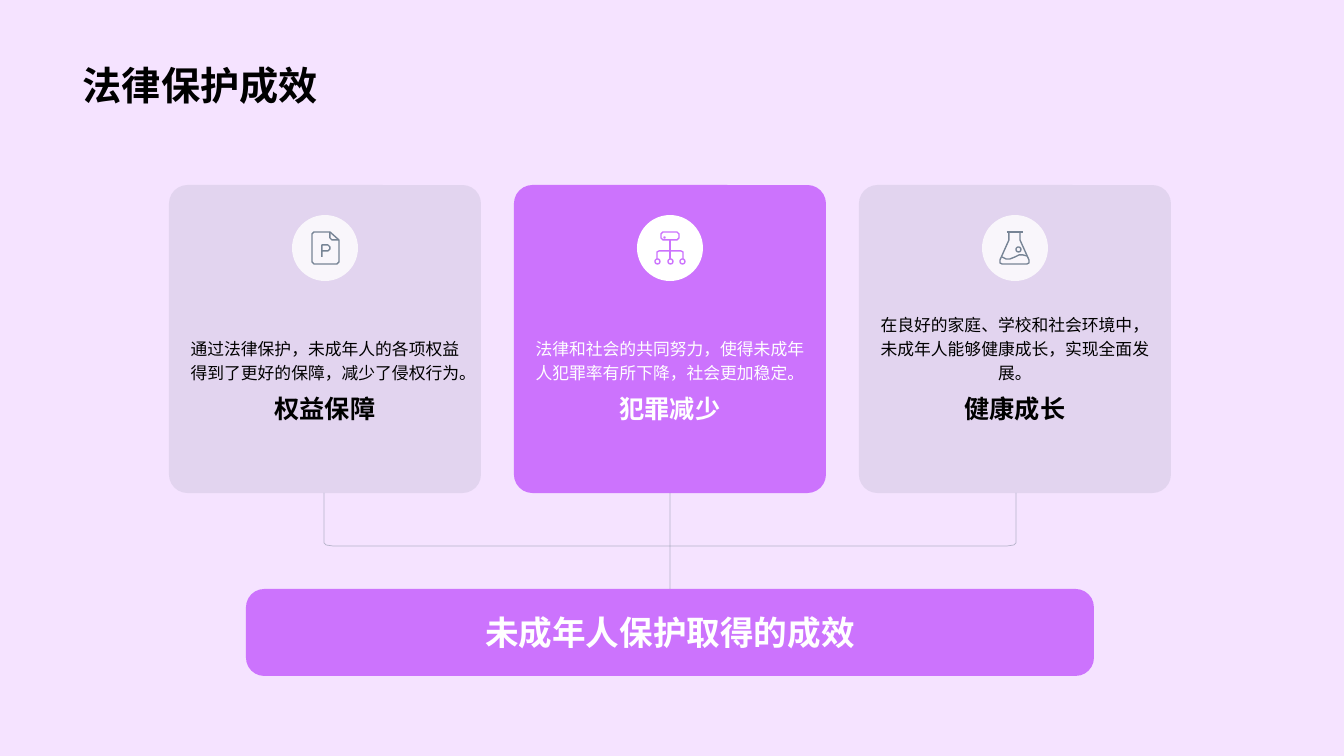
from pptx import Presentation
from pptx.dml.color import RGBColor
from pptx.enum.lang import MSO_LANGUAGE_ID as LANG
from pptx.enum.shapes import MSO_CONNECTOR as CONN, MSO_SHAPE as SHAPE
from pptx.enum.text import MSO_ANCHOR as ANCHOR, PP_ALIGN as ALIGN
from pptx.oxml.ns import qn
from pptx.util import Emu, Pt
from lxml.etree import SubElement

SLIDE_W, SLIDE_H = 1344, 756
PX = 12192000 / SLIDE_W
FONT = "Arial"
COLORS = {"bg": "F5E3FF", "purple": "CC73FD", "slate": "778495",
          "white": "FFFFFF", "black": "000000"}

# Card grid
CARD_X, CARD_Y, CARD_W, CARD_H, CARD_STEP = 169, 185, 312, 308, 345
BADGE = 66

# Icon strokes and dots (x, y, size), measured from the badge centre
DOCUMENT = (
    [[(-11, -16), (5, -16), (14, -8), (14, 14), (12, 16), (-11, 16),
      (-13, 14), (-13, -14), (-11, -16)],
     [(5, -16), (5, -10), (7, -8), (14, -8)],
     [(-3, 9), (-3, -3), (3, -3), (5, -1), (5, 1), (3, 3), (-3, 3)]],
    [])
NETWORK = (
    [[(-7, -16), (7, -16), (9, -14), (9, -10), (7, -8), (-7, -8),
      (-9, -10), (-9, -14), (-7, -16)],
     [(0, -8), (0, 11)],
     [(-13, 11), (-13, 4), (-11, 3), (11, 3), (13, 4), (13, 11)]],
    [(-15, 11, 5), (-2, 11, 5), (10, 11, 5), (-6, -11, 1)])
FLASK = (
    [[(-8, -16), (8, -16)],
     [(-6, -16), (-6, -8), (-15, 12), (-15, 15), (-13, 16), (12, 16),
      (14, 15), (14, 12), (5, -8), (5, -16)],
     [(-13, 9), (-9, 11), (-5, 11), (0, 9), (4, 7), (8, 7), (12, 8)]],
    [(1, -1, 5)])

CARDS = [
    ("权益保障", "通过法律保护，未成年人的各项权益得到了更好的保障，减少了侵权行为。", DOCUMENT),
    ("犯罪减少", "法律和社会的共同努力，使得未成年人犯罪率有所下降，社会更加稳定。", NETWORK),
    ("健康成长", "在良好的家庭、学校和社会环境中，未成年人能够健康成长，实现全面发展。", FLASK),
]


def px(n):
    return Emu(round(n * PX))


def paint(fmt, color, alpha=100):
    """Give a fill a solid colour, with opacity in percent."""
    fmt.solid()
    fmt.fore_color.rgb = RGBColor.from_string(COLORS[color])
    if alpha < 100:
        clr = fmt._xPr.find(qn("a:solidFill"))[0]
        SubElement(clr, qn("a:alpha"), val=str(alpha * 1000))


def stroke(s, color, width, alpha=100):
    s.line.width = Pt(width)
    paint(s.line.fill, color, alpha)


def write(s, text, size=12, color="black", bold=False, align=ALIGN.CENTER,
          anchor=ANCHOR.TOP, spacing=None):
    tf = s.text_frame
    tf.word_wrap = True
    tf.vertical_anchor = anchor
    p = tf.paragraphs[0]
    p.alignment = align
    p.line_spacing = spacing
    r = p.add_run()
    r.text = text
    r.font.name, r.font.size, r.font.bold = FONT, Pt(size), bold
    r.font.language_id = LANG.SIMPLIFIED_CHINESE
    paint(r.font.fill, color)


def add_text(slide, x, y, w, h, text, **fmt):
    write(slide.shapes.add_textbox(px(x), px(y), px(w), px(h)), text, **fmt)


def add_block(slide, kind, x, y, w, h, color=None, alpha=100, corner=None):
    s = slide.shapes.add_shape(kind, px(x), px(y), px(w), px(h))
    s.shadow.inherit = False
    s.line.fill.background()
    if color:
        paint(s.fill, color, alpha)
    else:
        s.fill.background()
    if corner is not None:
        s.adjustments[0] = corner
    return s


def add_outline(slide, x, y, strokes, color, width, alpha=100):
    """Draw open strokes whose points are measured from (x, y)."""
    paths = [[(x + dx, y + dy) for dx, dy in points] for points in strokes]
    fb = slide.shapes.build_freeform(*paths[0][0], scale=PX)
    for i, points in enumerate(paths):
        if i:
            fb.move_to(*points[0])
        fb.add_line_segments(points[1:], close=False)
    s = fb.convert_to_shape()
    s.shadow.inherit = False
    s.fill.background()
    stroke(s, color, width, alpha)


def add_icon(slide, cx, cy, icon, color):
    strokes, dots = icon
    add_outline(slide, cx, cy, strokes, color, 1)
    for dx, dy, size in dots:
        dot = add_block(slide, SHAPE.OVAL, cx + dx, cy + dy, size, size)
        stroke(dot, color, 1)


def add_card(slide, x, title, body, icon, active):
    fill, alpha = ("purple", 100) if active else ("slate", 15)
    ink = "white" if active else "black"
    card = add_block(slide, SHAPE.ROUNDED_RECTANGLE, x, CARD_Y, CARD_W, CARD_H,
                     fill, alpha, corner=0.06)
    cx, cy = x + CARD_W // 2, CARD_Y + 63
    add_block(slide, SHAPE.OVAL, cx - BADGE // 2, cy - BADGE // 2, BADGE, BADGE,
              "white", 100 if active else 80)
    add_icon(slide, cx, cy, icon, fill)
    add_text(slide, x, 388, CARD_W, 70, title, size=18, color=ink, bold=True)
    add_text(slide, x + 10, 296, CARD_W - 20, 92, body, color=ink,
             anchor=ANCHOR.BOTTOM, spacing=1.2)
    return card


def add_link(slide, top, bottom):
    """Join the bottom of one box to the top of another."""
    c = slide.shapes.add_connector(CONN.STRAIGHT, 0, 0, 0, 0)
    c.begin_connect(top, 2)
    c.end_connect(bottom, 0)
    stroke(c, "slate", 0.5, 50)
    SubElement(c._element.spPr, qn("a:effectLst"))


def main():
    prs = Presentation()
    prs.slide_width, prs.slide_height = px(SLIDE_W), px(SLIDE_H)
    slide = prs.slides.add_slide(prs.slide_layouts[6])
    paint(slide.background.fill, "bg")

    # Title
    add_text(slide, 73, 14, 1198, 99, "法律保护成效", size=28, bold=True,
             align=ALIGN.LEFT, anchor=ANCHOR.BOTTOM)

    # Bracket under the cards
    bracket = [(0, 0), (0, 50), (2, 52), (9, 53),
               (683, 53), (690, 52), (692, 50), (692, 0)]
    add_outline(slide, 324, CARD_Y + CARD_H, [bracket], "slate", 0.5, 50)

    # Summary bar
    bar = add_block(slide, SHAPE.ROUNDED_RECTANGLE, 246, 589, 848, 87,
                    "purple", corner=0.21)
    write(bar, "未成年人保护取得的成效", size=24, color="white", bold=True,
          anchor=ANCHOR.MIDDLE)

    # Cards, the middle one highlighted and linked to the bar
    for i, (title, body, icon) in enumerate(CARDS):
        active = i == 1
        card = add_card(slide, CARD_X + i * CARD_STEP, title, body, icon, active)
        if active:
            add_link(slide, card, bar)

    prs.save("out.pptx")


if __name__ == "__main__":
    main()
